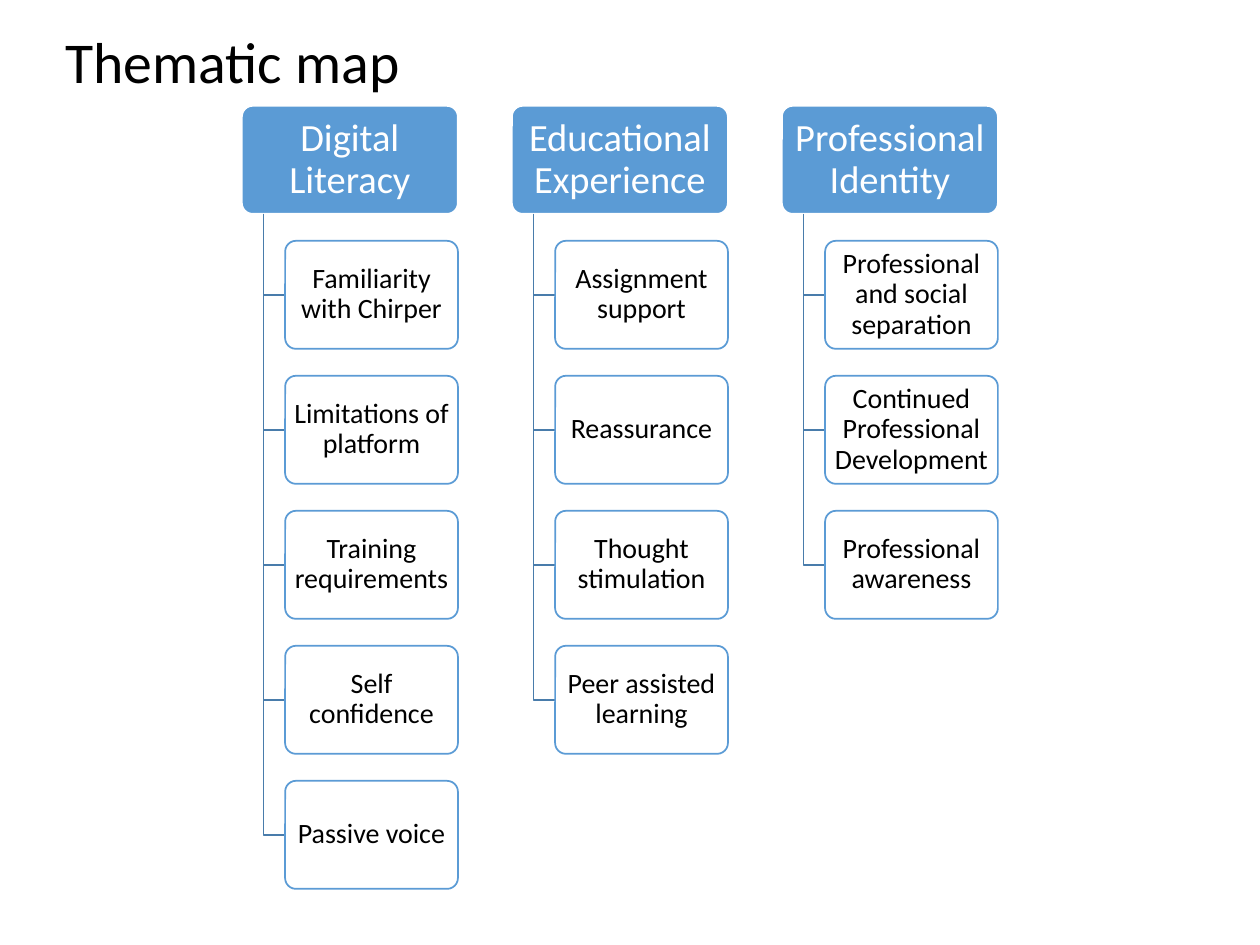
from pptx import Presentation
from pptx.dml.color import RGBColor
from pptx.enum.shapes import MSO_SHAPE
from pptx.enum.text import MSO_ANCHOR, MSO_AUTO_SIZE, PP_ALIGN
from pptx.util import Inches, Pt

THEMES = {
    "Digital Literacy": [
        "Familiarity with Chirper",
        "Limitations of platform",
        "Training requirements",
        "Self confidence",
        "Passive voice",
    ],
    "Educational Experience": [
        "Assignment support",
        "Reassurance",
        "Thought stimulation",
        "Peer assisted learning",
    ],
    "Professional Identity": [
        "Professional and social separation",
        "Continued Professional Development",
        "Professional awareness",
    ],
}
BLUE, STEEL, WHITE, BLACK = "5B9BD5", "497CAB", "FFFFFF", "000000"


def color(value):
    return RGBColor.from_string(value)


def add_box(shapes, text, left, top, width, fill, line, ink, size, margin):
    box = shapes.add_shape(MSO_SHAPE.ROUNDED_RECTANGLE, left, top, width, box_height)
    box.adjustments[0] = 0.1
    box.shadow.inherit = False
    box.fill.solid()
    box.fill.fore_color.rgb = color(fill)
    box.line.color.rgb = color(line)
    box.line.width = Pt(1)
    frame = box.text_frame
    frame.word_wrap = True
    frame.vertical_anchor = MSO_ANCHOR.MIDDLE
    frame.margin_left = frame.margin_right = Inches(margin)
    frame.margin_top = frame.margin_bottom = Inches(0.02)
    para = frame.paragraphs[0]
    para.text = text
    para.alignment = PP_ALIGN.CENTER
    para.line_spacing = 0.9
    para.font.name = "Calibri"
    para.font.size = Pt(size)
    para.font.color.rgb = color(ink)


deck = Presentation()
deck.slide_width, deck.slide_height = Inches(10), Inches(7.5)
page = deck.slides.add_slide(deck.slide_layouts[5])

title = page.shapes.title
title.left, title.top = Inches(0.42), Inches(-0.11)
title.width, title.height = Inches(9), Inches(1.25)
title.text_frame.auto_size = MSO_AUTO_SIZE.NONE
title.text_frame.vertical_anchor = MSO_ANCHOR.MIDDLE
para = title.text_frame.paragraphs[0]
para.text = "Thematic map"
para.alignment = PP_ALIGN.LEFT
para.line_spacing = 0.9
para.font.name = "Calibri"
para.font.size = Pt(33)
para.font.color.rgb = color(BLACK)

# One row is a seventh of the slide; every other length is a share of it.
row = deck.slide_height / 7
column = 2 * row
box_height = int(0.8 * row)
theme_width = int(1.6 * row)
item_width = int(1.28 * row)
stem_indent = int(0.16 * row)
item_indent = 2 * stem_indent
map_left, map_top = Inches(1.92), Inches(0.84)

for column_number, (theme, items) in enumerate(THEMES.items()):
    left = int(map_left + column_number * column)
    add_box(page.shapes, theme, left, map_top, theme_width,
            BLUE, WHITE, WHITE, 22, 0.05)
    stem_left, item_left = left + stem_indent, left + item_indent
    stem_top = map_top + box_height
    for row_number, item in enumerate(items, start=1):
        item_top = int(map_top + row_number * row)
        item_middle = item_top + box_height // 2
        builder = page.shapes.build_freeform(stem_left, stem_top)
        builder.add_line_segments(
            [(stem_left, item_middle), (item_left, item_middle)], close=False)
        branch = builder.convert_to_shape()
        branch.shadow.inherit = False
        branch.fill.background()
        branch.line.color.rgb = color(STEEL)
        branch.line.width = Pt(1)
        add_box(page.shapes, item, item_left, item_top, item_width,
                WHITE, BLUE, BLACK, 16, 0.03)

deck.save("out.pptx")
